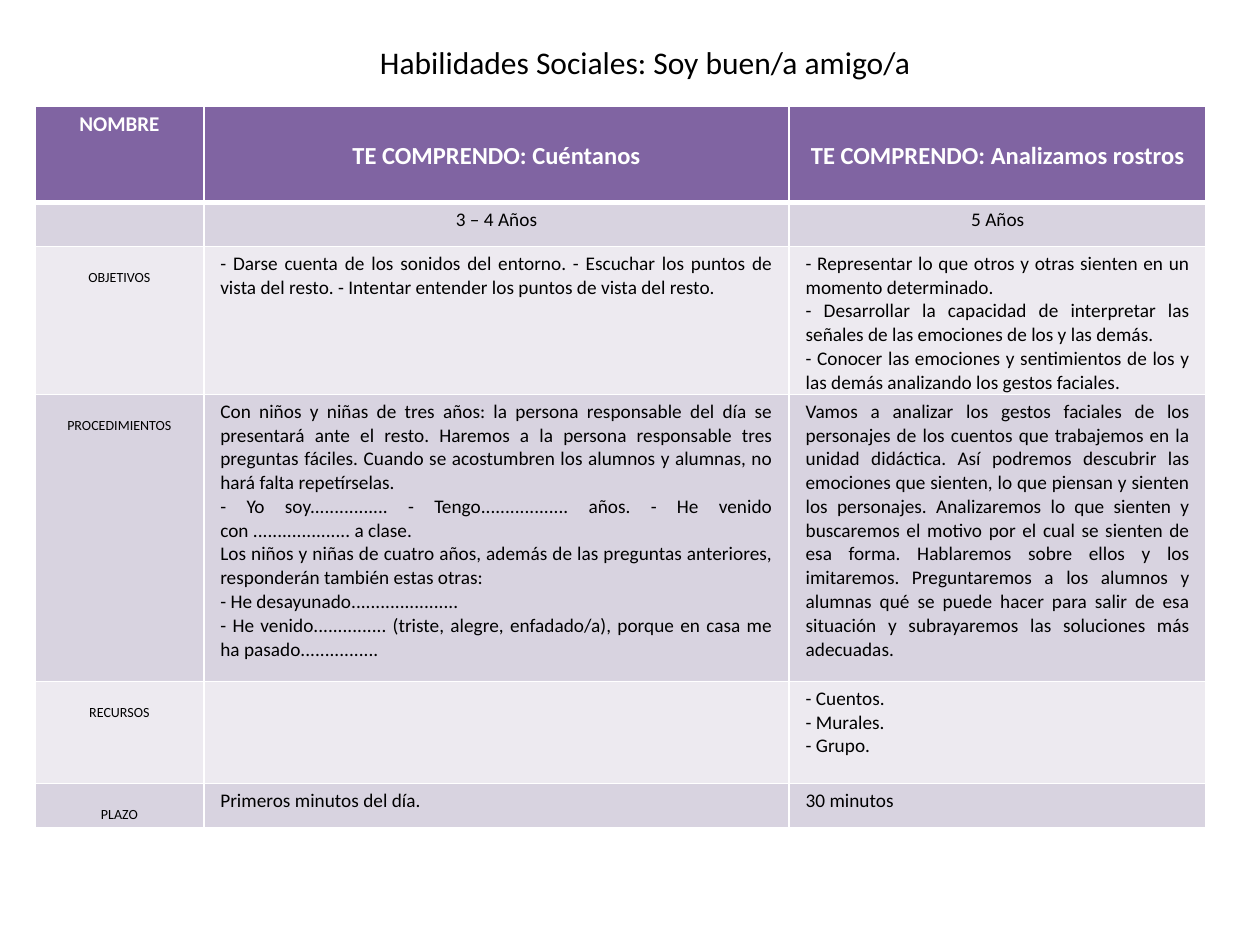
"""Builds a slide with a table of social skills activities."""
from lxml.etree import SubElement
from pptx import Presentation
from pptx.dml.color import RGBColor
from pptx.enum.text import MSO_ANCHOR, PP_ALIGN
from pptx.oxml.ns import qn
from pptx.util import Pt

BLACK = RGBColor(0x00, 0x00, 0x00)
WHITE = RGBColor(0xFF, 0xFF, 0xFF)
PURPLE = RGBColor(0x80, 0x64, 0xA2)
LILAC = RGBColor(0xD8, 0xD3, 0xE0)
PALE = RGBColor(0xED, 0xEA, 0xF0)
FONT = "Calibri"
CENTER, LEFT, JUSTIFY = PP_ALIGN.CENTER, PP_ALIGN.LEFT, PP_ALIGN.JUSTIFY

COLS = [96.5, 334.5, 238.3]
HEIGHTS = [55.4, 25.1, 84.6, 164, 58.3, 25.1]
ROWS = [
    ["NOMBRE", "TE COMPRENDO: Cuéntanos", "TE COMPRENDO: Analizamos rostros"],
    ["", "3 – 4 Años", "5 Años"],
    ["OBJETIVOS",
     "- Darse cuenta de los sonidos del entorno. - Escuchar los puntos de vista "
     "del resto. - Intentar entender los puntos de vista del resto.",
     "- Representar lo que otros y otras sienten en un momento determinado.\n"
     "- Desarrollar la capacidad de interpretar las señales de las emociones de "
     "los y las demás.\n"
     "- Conocer las emociones y sentimientos de los y las demás analizando los "
     "gestos faciales."],
    ["PROCEDIMIENTOS",
     "Con niños y niñas de tres años: la persona responsable del día se "
     "presentará ante el resto. Haremos a la persona responsable tres preguntas "
     "fáciles. Cuando se acostumbren los alumnos y alumnas, no hará falta "
     "repetírselas.\n"
     "- Yo soy................ - Tengo.................. años. - He venido "
     "con .................... a clase.\n"
     "Los niños y niñas de cuatro años, además de las preguntas anteriores, "
     "responderán también estas otras:\n"
     "- He desayunado......................\n"
     "- He venido............... (triste, alegre, enfadado/a), porque en casa me "
     "ha pasado................",
     "Vamos a analizar los gestos faciales de los personajes de los cuentos que "
     "trabajemos en la unidad didáctica. Así podremos descubrir las emociones que "
     "sienten, lo que piensan y sienten los personajes. Analizaremos lo que "
     "sienten y buscaremos el motivo por el cual se sienten de esa forma. "
     "Hablaremos sobre ellos y los imitaremos. Preguntaremos a los alumnos y "
     "alumnas qué se puede hacer para salir de esa situación y subrayaremos las "
     "soluciones más adecuadas."],
    ["RECURSOS", "", "- Cuentos.\n- Murales.\n- Grupo."],
    ["PLAZO", "Primeros minutos del día.", "30 minutos"],
]


def format_text(tf, size, color, align, bold=False):
    """Give every paragraph of a text frame the same look."""
    for p in tf.paragraphs:
        p.alignment = align
        p.font.name, p.font.size, p.font.bold = FONT, Pt(size), bold
        p.font.color.rgb = color


def add_title(s, text):
    """Place the slide title."""
    sp = s.shapes.title
    sp.left, sp.top, sp.width, sp.height = Pt(196), Pt(21), Pt(345.5), Pt(29)
    tf = sp.text_frame
    tf.text = text
    tf.word_wrap = False
    tf.vertical_anchor = MSO_ANCHOR.MIDDLE
    format_text(tf, 18, BLACK, CENTER)


def set_borders(cell, bottom, top):
    """Draw white lines around a cell."""
    tcPr = cell._tc.get_or_add_tcPr()
    widths = {"a:lnL": 1, "a:lnR": 1, "a:lnT": top, "a:lnB": bottom}
    for i, (tag, width) in enumerate(widths.items()):
        ln = SubElement(tcPr, qn(tag), w=str(Pt(width)))
        fill = SubElement(ln, qn("a:solidFill"))
        SubElement(fill, qn("a:srgbClr"), val=str(WHITE))
        tcPr.insert(i, ln)


def cell_style(row, col):
    """Return size, colour, alignment, boldness and top margin of a cell."""
    if row == 0:
        return (14, WHITE, CENTER, True, 20) if col else (12, WHITE, CENTER, True, 3)
    if col == 0:
        return 8, BLACK, CENTER, False, 12.7
    align = CENTER if row == 1 else LEFT if row > 3 else JUSTIFY
    return 11, BLACK, align, False, 3


def fill_cell(cell, text, row, col):
    """Write and format one cell."""
    size, color, align, bold, top = cell_style(row, col)
    cell.text = text
    cell.margin_left = cell.margin_right = Pt(9.4)
    cell.margin_top, cell.margin_bottom = Pt(top), Pt(0)
    cell.fill.solid()
    cell.fill.fore_color.rgb = PURPLE if row == 0 else LILAC if row % 2 else PALE
    format_text(cell.text_frame, size, color, align, bold)
    set_borders(cell, 3 if row == 0 else 1, 3 if row == 1 else 1)


def add_activities(s):
    """Add the table of activities."""
    table = s.shapes.add_table(len(ROWS), len(COLS), Pt(20), Pt(60.5),
                               Pt(sum(COLS)), Pt(sum(HEIGHTS))).table
    table.first_row = table.horz_banding = False
    for column, width in zip(table.columns, COLS):
        column.width = Pt(width)
    for i, (height, texts) in enumerate(zip(HEIGHTS, ROWS)):
        table.rows[i].height = Pt(height)
        for j, text in enumerate(texts):
            fill_cell(table.cell(i, j), text, i, j)


def main():
    """Build and save the slide."""
    prs = Presentation()
    prs.slide_width, prs.slide_height = Pt(720), Pt(540)
    s = prs.slides.add_slide(prs.slide_layouts[5])
    add_title(s, "Habilidades Sociales: Soy buen/a amigo/a")
    add_activities(s)
    prs.save("out.pptx")


if __name__ == "__main__":
    main()
